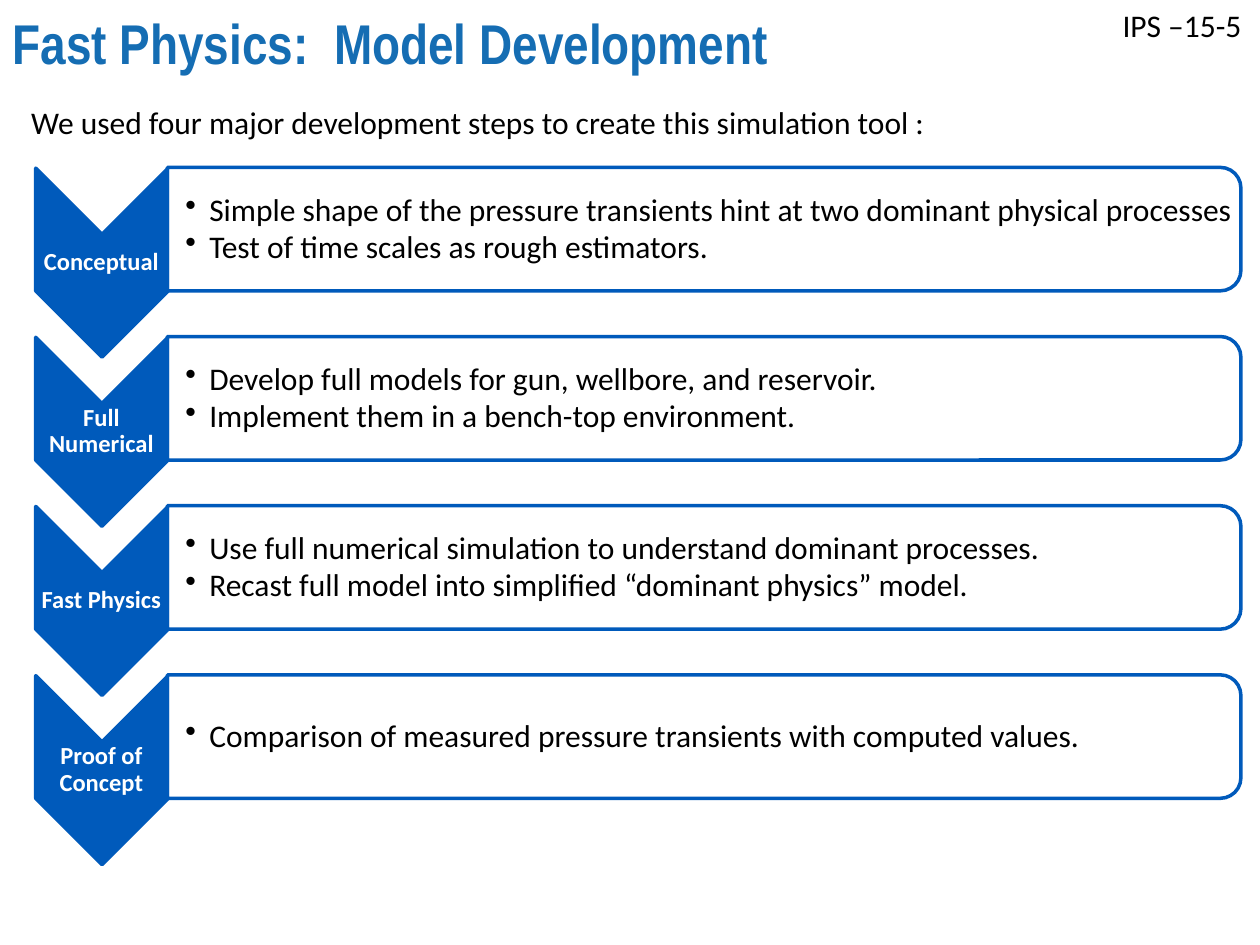
from lxml import etree
from pptx import Presentation
from pptx import util as u
from pptx.dml.color import RGBColor
from pptx.enum import shapes, text
from pptx.oxml.ns import qn

BLUE = "005ABB"
BLACK = "000000"
WHITE = "FFFFFF"
ROW_PITCH = 3.41
STEPS = [
    ("Conceptual", [
        "Simple shape of the pressure transients hint at two dominant physical processes",
        "Test of time scales as rough estimators."]),
    ("Full Numerical", [
        "Develop full models for gun, wellbore, and reservoir.",
        "Implement them in a bench-top environment."]),
    ("Fast Physics", [
        "Use full numerical simulation to understand dominant processes.",
        "Recast full model into simplified “dominant physics” model."]),
    ("Proof of Concept", [
        "Comparison of measured pressure transients with computed values."]),
]


def color(value):
    """Turn a hex string into a colour."""
    return RGBColor.from_string(value)


def add_span(para, words, size, tint, bold=False, face="Calibri"):
    """Append one formatted run to a paragraph."""
    span = para.add_run()
    span.text = words
    span.font.name = face
    span.font.size = u.Pt(size)
    span.font.bold = bold
    span.font.color.rgb = color(tint)


def add_box(page, left, top, width, height, wrap=True):
    """Add a text box and return its text frame."""
    box = page.shapes.add_textbox(u.Cm(left), u.Cm(top), u.Cm(width), u.Cm(height))
    box.text_frame.word_wrap = wrap
    return box.text_frame


def set_tight(frame, left_margin):
    """Centre a frame vertically and shrink its margins."""
    frame.vertical_anchor = text.MSO_ANCHOR.MIDDLE
    frame.margin_left = u.Cm(left_margin)
    frame.margin_right = frame.margin_top = frame.margin_bottom = u.Cm(0.02)


def add_outlined(page, kind, left, top, width, height, fill):
    """Add a preset shape turned a quarter, with a blue outline."""
    shape = page.shapes.add_shape(kind, u.Cm(left), u.Cm(top), u.Cm(width), u.Cm(height))
    shape.rotation = 90
    shape.shadow.inherit = False
    shape.fill.solid()
    shape.fill.fore_color.rgb = color(fill)
    shape.line.color.rgb = color(BLUE)
    shape.line.width = u.Pt(2)
    return shape


def add_bullet(para, words):
    """Write one bulleted line with a hanging indent."""
    props = para._p.get_or_add_pPr()
    props.set("marL", str(u.Cm(0.48)))
    props.set("indent", str(-u.Cm(0.48)))
    etree.SubElement(props, qn("a:buChar")).set("char", "•")
    para.line_spacing = 0.9
    para.space_after = u.Pt(2)
    add_span(para, words, 18, BLACK)


def add_step(page, offset, name, lines):
    """Add one development step: chevron, label, panel and bullets."""
    add_outlined(page, shapes.MSO_SHAPE.CHEVRON, 0.15, 3.96 + offset, 3.81, 2.67, BLUE)
    label = add_box(page, 0.71, 4.72 + offset, 2.67, 1.14)
    set_tight(label, 0.02)
    para = label.paragraphs[0]
    para.alignment = text.PP_ALIGN.CENTER
    para.line_spacing = 0.9
    add_span(para, name, 14, WHITE, bold=True)

    panel = add_outlined(page, shapes.MSO_SHAPE.ROUND_2_SAME_RECTANGLE,
                         12.95, -6.2 + offset, 2.49, 21.64, WHITE)
    tint = panel.fill._xPr.find(qn("a:solidFill"))[0]
    etree.SubElement(tint, qn("a:alpha")).set("val", "90000")

    bullets = add_box(page, 3.38, 3.51 + offset, 21.51, 2.24)
    set_tight(bullets, 0.36)
    for index, words in enumerate(lines):
        add_bullet(bullets.add_paragraph() if index else bullets.paragraphs[0], words)


def set_title(page, words):
    """Move and format the title placeholder."""
    title = page.shapes.title
    title.left, title.top = u.Cm(0), u.Cm(0.03)
    title.width, title.height = u.Cm(22.86), u.Cm(1.65)
    title.text_frame.vertical_anchor = text.MSO_ANCHOR.MIDDLE
    para = title.text_frame.paragraphs[0]
    para.alignment = text.PP_ALIGN.LEFT
    add_span(para, words, 32, "156DB3", bold=True, face="Arial Narrow")


def main():
    """Build the slide and save it."""
    deck = Presentation()
    deck.slide_width, deck.slide_height = u.Cm(25.4), u.Cm(19.05)
    page = deck.slides.add_slide(deck.slide_layouts[5])
    set_title(page, "Fast Physics:  Model Development")
    for index, (name, lines) in enumerate(STEPS):
        add_step(page, index * ROW_PITCH, name, lines)
    number = add_box(page, 22.38, 0, 3.02, 1.02)
    add_span(number.paragraphs[0], "IPS –15-5", 18, BLACK)
    intro = add_box(page, 0.38, 1.96, 19, 1.02, wrap=False)
    add_span(intro.paragraphs[0],
             "We used four major development steps to create this simulation tool :", 18, BLACK)
    deck.save("out.pptx")


if __name__ == "__main__":
    main()
